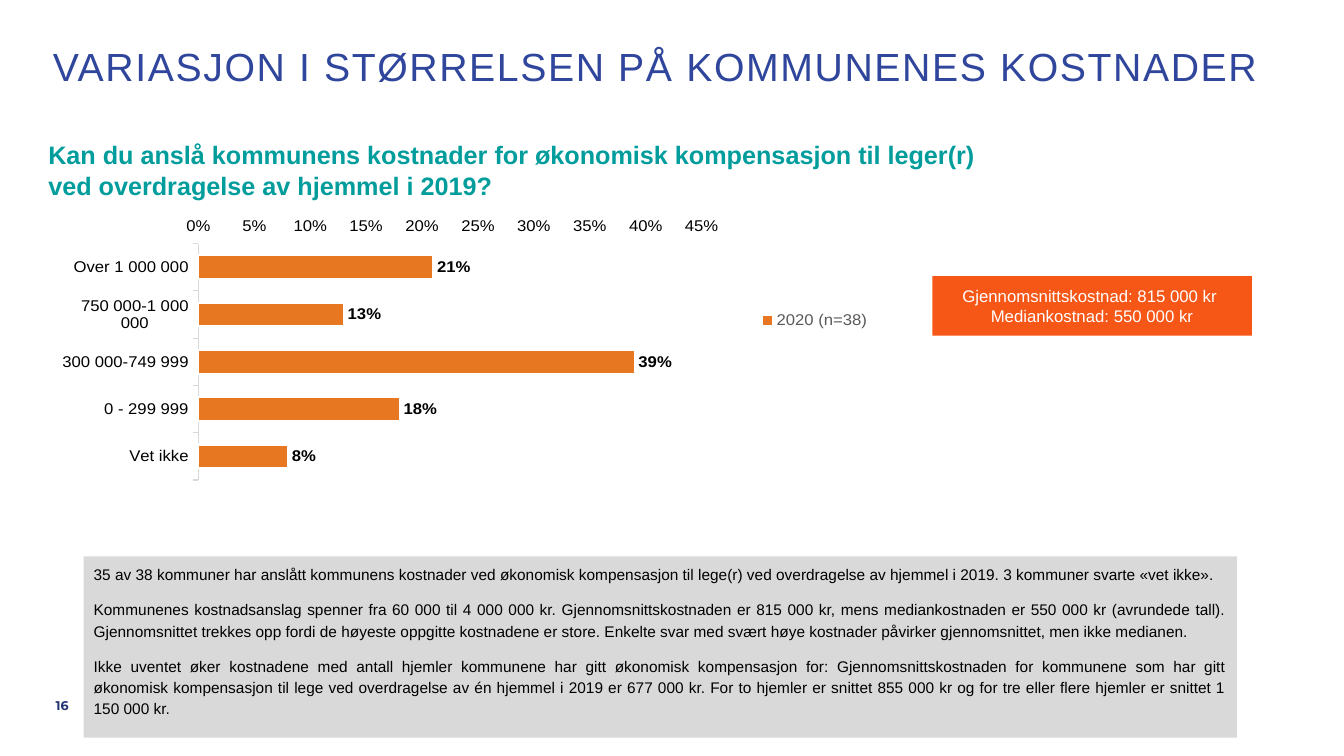
import pptx
import pptx.util
import pptx.chart.data
import pptx.dml.color
import pptx.enum.chart
import pptx.enum.shapes
import pptx.enum.text
import pptx.oxml
import pptx.oxml.ns

Pt = pptx.util.Pt
ALIGN = pptx.enum.text.PP_ALIGN
ANCHOR = pptx.enum.text.MSO_ANCHOR
SHAPE = pptx.enum.shapes.MSO_SHAPE
XL = pptx.enum.chart

# Content
COLORS = {"title": "2F469C", "question": "009D9C", "bar": "E87722", "cost": "F65616",
          "note": "D9D9D9", "axis": "D9D9D9", "legend": "595959", "number": "233475",
          "black": "000000", "white": "FFFFFF"}
TITLE = ["VARIASJON I STØRRELSEN PÅ KOMMUNENES KOSTNADER"]
QUESTION = ["Kan du anslå kommunens kostnader for økonomisk kompensasjon til leger(r) "
            "ved overdragelse av hjemmel i 2019?"]
COSTS = ["Gjennomsnittskostnad: 815 000 kr ", "Mediankostnad: 550 000 kr"]
NOTES = [
    "35 av 38 kommuner har anslått kommunens kostnader ved økonomisk kompensasjon til lege(r) "
    "ved overdragelse av hjemmel i 2019. 3 kommuner svarte «vet ikke».",
    "Kommunenes kostnadsanslag spenner fra 60 000 til 4 000 000 kr. Gjennomsnittskostnaden er "
    "815 000 kr, mens mediankostnaden er 550 000 kr (avrundede tall). Gjennomsnittet trekkes opp "
    "fordi de høyeste oppgitte kostnadene er store. Enkelte svar med svært høye kostnader "
    "påvirker gjennomsnittet, men ikke medianen.",
    "Ikke uventet øker kostnadene med antall hjemler kommunene har gitt økonomisk kompensasjon "
    "for: Gjennomsnittskostnaden for kommunene som har gitt økonomisk kompensasjon til lege ved "
    "overdragelse av én hjemmel i 2019 er 677 000 kr. For to hjemler er snittet 855 000 kr og for "
    "tre eller flere hjemler er snittet 1 150 000 kr.",
]
SERIES = "2020 (n=38)"
SHARES = {"Over 1 000 000": 0.21, "750 000-1 000 000": 0.13, "300 000-749 999": 0.39,
          "0 - 299 999": 0.18, "Vet ikke": 0.08}
# Fractions of the chart: x, y, width, height
PLOT = (0.155, 0.02, 0.6, 0.89)
LEGEND = (0.82, 0.26, 0.14, 0.1)


def rgb(name):
    return pptx.dml.color.RGBColor.from_string(COLORS[name])


def set_font(font, size, color, bold=False, name="Arial"):
    for key, value in dict(size=Pt(size), bold=bold, name=name).items():
        setattr(font, key, value)
    font.color.rgb = rgb(color)


def write(sp, lines, font, para=None, frame=None):
    tf = sp.text_frame
    for key, value in dict(word_wrap=True, vertical_anchor=ANCHOR.MIDDLE, **(frame or {})).items():
        setattr(tf, key, value)
    for i, line in enumerate(lines):
        p = tf.paragraphs[0] if i == 0 else tf.add_paragraph()
        for key, value in dict(alignment=ALIGN.LEFT, **(para or {})).items() if not para else para.items():
            setattr(p, key, value)
        r = p.add_run()
        r.text = line
        set_font(r.font, **font)


def add_text(box, *args, **kwargs):
    sp = s.shapes.add_textbox(*map(Pt, box))
    write(sp, *args, **kwargs)
    return sp


def add_panel(kind, box, fill, *args, **kwargs):
    sp = s.shapes.add_shape(kind, *map(Pt, box))
    sp.shadow.inherit = False
    sp.fill.solid()
    sp.fill.fore_color.rgb = rgb(fill)
    sp.line.fill.background()
    write(sp, *args, **kwargs)
    return sp


def place(parent, box, inner=False):
    """Give a chart part a manual layout."""
    for old in parent.findall(pptx.oxml.ns.qn("c:layout")):
        parent.remove(old)
    target = '<c:layoutTarget val="inner"/>' if inner else ""
    modes = "".join(f'<c:{k}Mode val="edge"/>' for k in "xy")
    sizes = "".join(f'<c:{k} val="{v}"/>' for k, v in zip("xywh", box))
    layout = pptx.oxml.parse_xml(
        f'<c:layout {pptx.oxml.ns.nsdecls("c")}><c:manualLayout>{target}{modes}{sizes}'
        '</c:manualLayout></c:layout>')
    parent.insert(0 if inner else 1, layout)


prs = pptx.Presentation()
prs.slide_width, prs.slide_height = Pt(960), Pt(540)
s = prs.slides.add_slide(prs.slide_layouts[6])

# Title and question
title = add_text((31.7, 30.2, 896.4, 38.2), TITLE, dict(size=28, color="title"),
                 para=dict(line_spacing=0.9),
                 frame=dict(margin_left=Pt(6), margin_right=Pt(6)))
title.text_frame.paragraphs[0].runs[0].font._element.set("spc", "120")
add_text((27.4, 95.8, 688.3, 51.1), QUESTION, dict(size=18, color="question", bold=True))

# Bar chart
data = pptx.chart.data.CategoryChartData(number_format="0%")
data.categories = list(SHARES)
data.add_series(SERIES, list(SHARES.values()))
chart = s.shapes.add_chart(XL.XL_CHART_TYPE.BAR_CLUSTERED,
                           *map(Pt, (44.6, 155.5, 603.4, 204.5)), data).chart
set_font(chart.font, 12, "black")
chart.has_title = False
plot = chart.plots[0]
plot.gap_width = 100
plot.vary_by_categories = False
bars = plot.series[0]
bars.format.fill.solid()
bars.format.fill.fore_color.rgb = rgb("bar")
bars.format.line.color.rgb = rgb("white")
bars.format.line.width = Pt(1.5)
labels = bars.data_labels
for key, value in dict(show_value=True, number_format="0%", number_format_is_linked=False,
                       position=XL.XL_LABEL_POSITION.OUTSIDE_END).items():
    setattr(labels, key, value)
set_font(labels.font, 12, "black", bold=True)

# Axes, with the first category on top and the percentages below
cats, vals = chart.category_axis, chart.value_axis
for axis in (cats, vals):
    axis.has_major_gridlines = False
    axis.major_tick_mark = XL.XL_TICK_MARK.OUTSIDE
    set_font(axis.tick_labels.font, 12, "black")
cats.reverse_order = True
cats.crosses = XL.XL_AXIS_CROSSES.MAXIMUM
cats.format.line.color.rgb = rgb("axis")
cats.format.line.width = Pt(0.75)
vals.minimum_scale, vals.maximum_scale, vals.major_unit = 0, 0.45, 0.05
vals.tick_labels.number_format = "0%"
vals.tick_labels.number_format_is_linked = False
vals.format.line.fill.background()

# Legend and layout
chart.has_legend = True
chart.legend.position = XL.XL_LEGEND_POSITION.BOTTOM
chart.legend.include_in_layout = False
set_font(chart.legend.font, 12, "legend")
place(chart.legend._element, LEGEND)
place(chart._chartSpace.chart.plotArea, PLOT, inner=True)

# Cost box, notes and page number
add_panel(SHAPE.RECTANGLE, (666, 197.3, 228.2, 42.5), "cost", COSTS,
          dict(size=12, color="white"), para=dict(alignment=ALIGN.CENTER))
notes = add_panel(SHAPE.ROUNDED_RECTANGLE, (59.8, 397.4, 823.7, 129.6), "note", NOTES,
                  dict(size=11, color="black"),
                  para=dict(alignment=ALIGN.JUSTIFY, line_spacing=1.15, space_after=Pt(10)),
                  frame=dict(margin_top=Pt(4.5)))
notes.adjustments[0] = 0
notes.text_frame.vertical_anchor = ANCHOR.TOP
add_text((30.2, 489.6, 23.8, 28.8), ["16"],
         dict(size=9, color="number", bold=True, name="Montserrat"),
         para=dict(alignment=ALIGN.RIGHT), frame=dict(margin_left=0, margin_right=Pt(5)))

prs.save("out.pptx")
